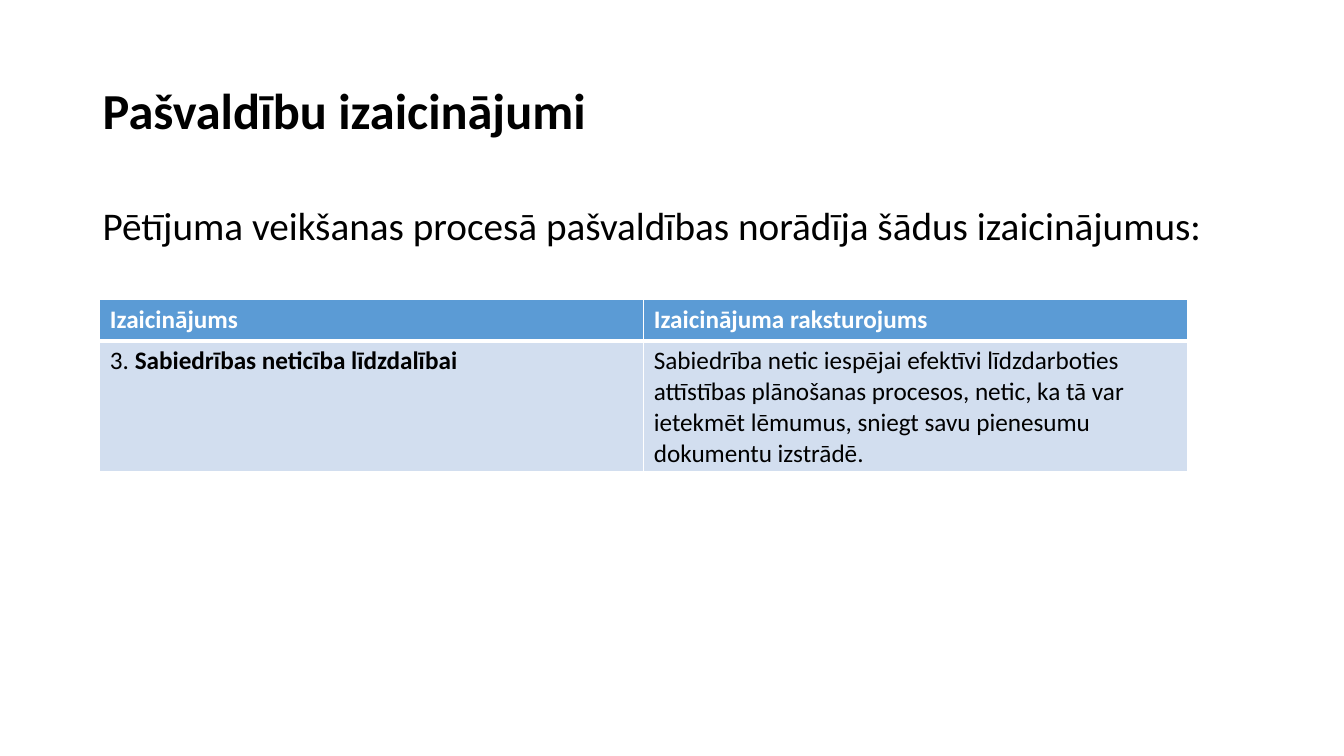
from lxml import etree
from pptx import Presentation
from pptx.dml.color import RGBColor
from pptx.enum.text import MSO_ANCHOR
from pptx.oxml.ns import qn
from pptx.util import Inches, Pt

TOP, MIDDLE = MSO_ANCHOR.TOP, MSO_ANCHOR.MIDDLE
COLORS = {"text": "000000", "white": "FFFFFF", "header": "5B9BD5", "body": "D2DEEF"}


class SlideBuilder:
    font = "Calibri"

    def __init__(self, slide):
        self.s = slide

    def color(self, name):
        return RGBColor.from_string(COLORS[name])

    def style(self, p, size, color="text", bold=None):
        p.font.name = self.font
        p.font.size = Pt(size)
        p.font.color.rgb = self.color(color)
        p.font.bold = bold

    def text(self, box, text, size, bold=False, anchor=TOP, before=0):
        sp = self.s.shapes.add_textbox(*map(Inches, box))
        tf = sp.text_frame
        tf.word_wrap = True
        tf.vertical_anchor = anchor
        p = tf.paragraphs[0]
        p.text = text
        p.line_spacing = 0.9
        p.space_before = Pt(before)
        self.style(p, size, bold=bold)

    def borders(self, cell, bottom):
        tc_pr = cell._tc.get_or_add_tcPr()
        widths = {"lnL": 1, "lnR": 1, "lnT": 1, "lnB": bottom}
        for i, (side, width) in enumerate(widths.items()):
            ln = etree.Element(qn(f"a:{side}"), w=str(Pt(width)))
            fill = etree.SubElement(ln, qn("a:solidFill"))
            etree.SubElement(fill, qn("a:srgbClr"), val=COLORS["white"])
            tc_pr.insert(i, ln)

    def table(self, box, heights, rows):
        frame = self.s.shapes.add_table(len(rows), len(rows[0]), *map(Inches, box))
        table = frame.table
        for i, (height, row) in enumerate(zip(heights, rows)):
            table.rows[i].height = Inches(height)
            header = i == 0
            for j, runs in enumerate(row):
                cell = table.cell(i, j)
                cell.fill.solid()
                cell.fill.fore_color.rgb = self.color("header" if header else "body")
                self.borders(cell, 3 if header else 1)
                p = cell.text_frame.paragraphs[0]
                self.style(p, 18, "white" if header else "text")
                for text, bold in runs:
                    r = p.add_run()
                    r.text = text
                    r.font.bold = bold


def main():
    prs = Presentation()
    prs.slide_width, prs.slide_height = Inches(13.33), Inches(7.5)
    slide = SlideBuilder(prs.slides.add_slide(prs.slide_layouts[6]))

    # Title and introduction
    slide.text((0.92, 0.4, 11.5, 1.45), "Pašvaldību izaicinājumi", 36,
               bold=True, anchor=MIDDLE)
    slide.text((0.92, 2, 11.5, 4.76),
               "Pētījuma veikšanas procesā pašvaldības norādīja šādus izaicinājumus:",
               28, before=10)

    # Challenge table: each cell is a list of (text, bold) runs
    slide.table((0.99, 2.97, 10.79, 1.71), (0.41, 1.3), [
        [[("Izaicinājums", True)], [("Izaicinājuma raksturojums", True)]],
        [[("3. ", False), ("Sabiedrības neticība līdzdalībai", True)],
         [("Sabiedrība netic iespējai efektīvi līdzdarboties attīstības plānošanas "
           "procesos, netic, ka tā var ietekmēt lēmumus, sniegt savu pienesumu "
           "dokumentu izstrādē.", False)]],
    ])

    prs.save("out.pptx")


if __name__ == "__main__":
    main()
